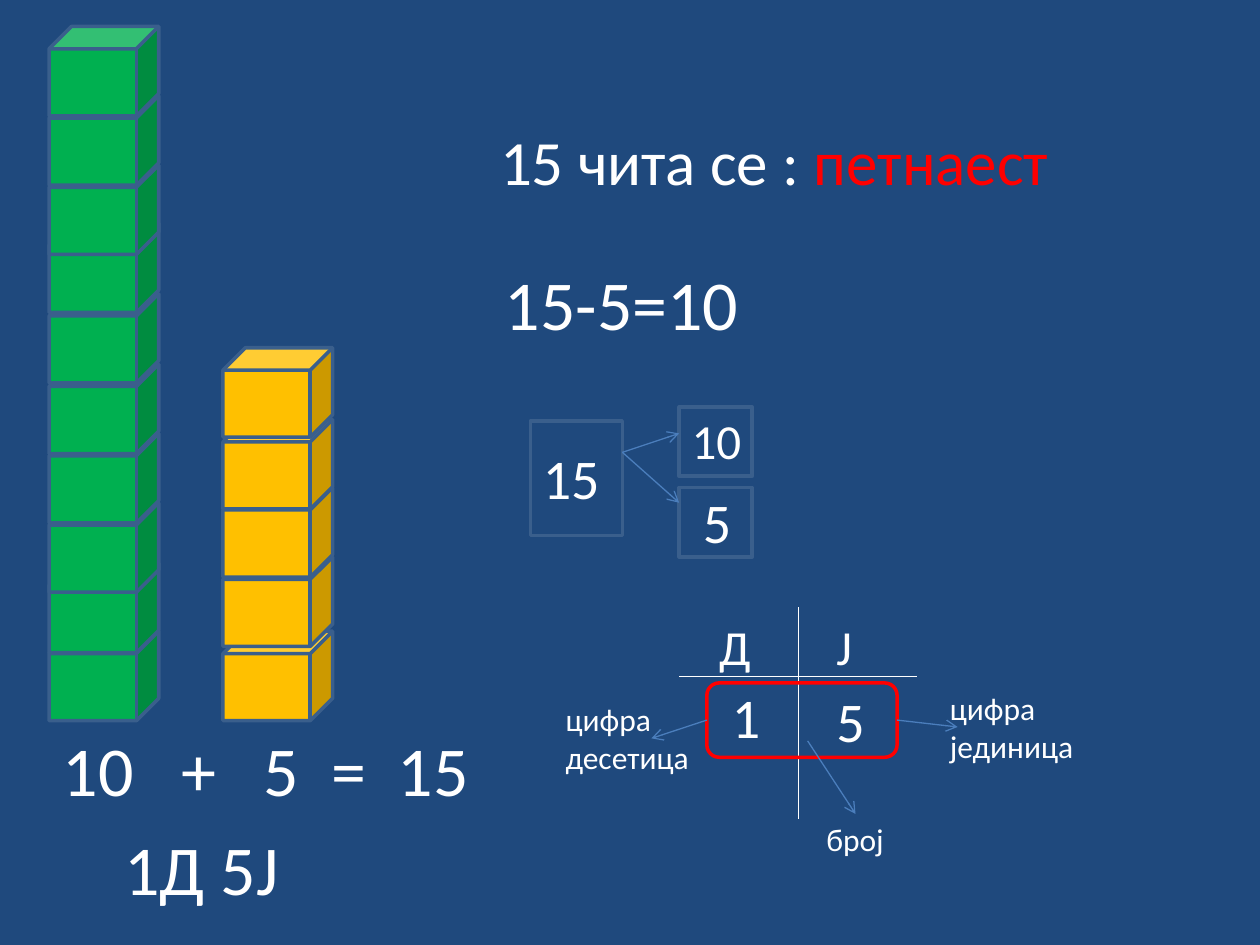
from lxml import etree
from pptx import Presentation
from pptx.dml.color import RGBColor
from pptx.enum.shapes import MSO_CONNECTOR, MSO_SHAPE
from pptx.enum.text import MSO_AUTO_SIZE
from pptx.oxml.ns import qn
from pptx.util import Inches, Pt

CUBE, BOX, ROUNDED = MSO_SHAPE.CUBE, MSO_SHAPE.RECTANGLE, MSO_SHAPE.ROUNDED_RECTANGLE
STRAIGHT = MSO_CONNECTOR.STRAIGHT
GROW = MSO_AUTO_SIZE.SHAPE_TO_FIT_TEXT
LEFT_SIDE, RIGHT_SIDE = 1, 3

NAVY = RGBColor(0x1F, 0x49, 0x7D)
EDGE = RGBColor(0x3A, 0x5F, 0x8C)
ARROW = RGBColor(0x4B, 0x7E, 0xBC)
GREEN = RGBColor(0x00, 0xB0, 0x50)
GOLD = RGBColor(0xFF, 0xC0, 0x00)
RED = RGBColor(0xFF, 0x00, 0x00)
WHITE = RGBColor(0xFF, 0xFF, 0xFF)

COLUMNS, ROWS = 100, 75
WIDTH, HEIGHT = Inches(10), Inches(7.5)


class Board:
    """Draws on one slide, with lengths in columns and rows of the grid."""

    font = "Calibri"

    def __init__(self, slide):
        self.slide = slide
        fill = slide.background.fill
        fill.solid()
        fill.fore_color.rgb = NAVY

    def x(self, columns):
        return round(WIDTH * columns / COLUMNS)

    def y(self, rows):
        return round(HEIGHT * rows / ROWS)

    def area(self, left, top, width, height):
        return self.x(left), self.y(top), self.x(width), self.y(height)

    def shape(self, kind, area, fill=None, line=EDGE):
        shape = self.slide.shapes.add_shape(kind, *self.area(*area))
        shape.shadow.inherit = False
        if fill is None:
            shape.fill.background()
        else:
            shape.fill.solid()
            shape.fill.fore_color.rgb = fill
        shape.line.color.rgb = line
        shape.line.width = Pt(2)
        return shape

    def stack(self, left, tops, color):
        for top in tops:
            self.shape(CUBE, (left, top, 8.7, 7.1), color)

    def text(self, area, size, *paragraphs, wrap=False, indent=0, tabs=()):
        """Each paragraph is a list of (words, colour) runs."""
        box = self.slide.shapes.add_textbox(*self.area(*area))
        frame = box.text_frame
        frame.word_wrap = wrap
        frame.auto_size = GROW
        for index, runs in enumerate(paragraphs):
            paragraph = frame.add_paragraph() if index else frame.paragraphs[0]
            for words, color in runs:
                run = paragraph.add_run()
                run.text = words
                run.font.name = self.font
                run.font.size = Pt(size)
                run.font.color.rgb = color
            if indent or tabs:
                self.set_gaps(paragraph, indent, tabs)

    def set_gaps(self, paragraph, indent, tabs):
        properties = paragraph._p.get_or_add_pPr()
        properties.set("marL", str(self.x(indent)))
        if tabs:
            stops = etree.SubElement(properties, qn("a:tabLst"))
            for tab in tabs:
                etree.SubElement(stops, qn("a:tab"), pos=str(self.x(tab)), algn="l")

    def label(self, area, size, *lines, **layout):
        self.text(area, size, *[[(line, WHITE)] for line in lines], **layout)

    def line(self, start, end, color=WHITE):
        line = self.slide.shapes.add_connector(
            STRAIGHT, self.x(start[0]), self.y(start[1]), self.x(end[0]), self.y(end[1]))
        line.line.color.rgb = color
        line.line.width = Pt(0.75)
        etree.SubElement(line._element.spPr, qn("a:effectLst"))
        return line

    def arrow(self, start, end):
        arrow = self.line(start, end, ARROW)
        etree.SubElement(arrow.line._get_or_add_ln(), qn("a:tailEnd"), type="arrow")
        return arrow


def main():
    deck = Presentation()
    deck.slide_width, deck.slide_height = WIDTH, HEIGHT
    board = Board(deck.slides.add_slide(deck.slide_layouts[6]))

    # Ten and five as towers, stacked from the bottom up
    board.stack(3.9, (50.1, 44.7, 39.9, 34.4, 28.9, 23.3, 17.7, 13.1, 7.6, 2.1), GREEN)
    board.stack(17.7, (50.1, 44.2, 38.7, 33.3, 27.6), GOLD)
    board.label((4, 57.2, 42.9, 7.7), 40, "10\t+\t5\t=\t15",
                wrap=True, tabs=(9.4, 15.9, 21.3, 26.6))
    board.label((5.1, 65, 21.3, 7.7), 40, "1Д 5Ј", wrap=True, indent=3.8)

    # Reading and subtraction
    board.text((31.9, 9.2, 66.9, 7.1), 36,
               [("15 чита се : ", WHITE), ("петнаест", RED)], wrap=True, indent=6.8)
    board.label((39.1, 20.2, 20.7, 7.7), 40, "15-5=10")

    # Fifteen split into ten and five
    board.shape(BOX, (42.1, 33.4, 7.3, 9.1))
    board.label((42.1, 34.7, 10.6, 6.4), 32, "15", wrap=True)
    for part_top, arrow_end in ((32.3, 34.4), (38.7, 39.9)):
        board.shape(BOX, (53.9, part_top, 5.8, 5.5))
        board.arrow((49.4, 35.9), (53.9, arrow_end))
    board.label((53.9, 32.1, 6, 5.7), 28, "10")
    board.label((54.8, 38.2, 4.3, 6.4), 32, "5")

    # Place value chart
    board.line((53.9, 53.7), (72.8, 53.7))
    board.line((63.4, 48.2), (63.4, 65))
    board.label((56.1, 48.4, 4.5, 5.7), 28, "Д")
    board.label((65.4, 48.4, 7.5, 5.7), 28, "Ј", wrap=True)
    board.label((57.1, 53.7, 4.3, 6.4), 32, "1")
    board.label((65.4, 54, 4.3, 6.4), 32, "5")
    number_frame = board.shape(ROUNDED, (56.1, 54.2, 15.1, 5.9), line=RED)
    board.label((64.6, 64.6, 6.6, 4), 18, "број")
    board.label((74.4, 54.2, 11.9, 7.1), 18, "цифра", "јединица")
    board.label((43.9, 55.1, 11.9, 7.1), 18, "цифра", "десетица")
    tens_arrow = board.arrow((56.1, 57.1), (51.7, 58.6))
    tens_arrow.begin_connect(number_frame, LEFT_SIDE)
    units_arrow = board.arrow((71.2, 57.1), (76, 57.7))
    units_arrow.begin_connect(number_frame, RIGHT_SIDE)
    board.arrow((64.1, 58.8), (67.9, 64.6))

    deck.save("out.pptx")


if __name__ == "__main__":
    main()
